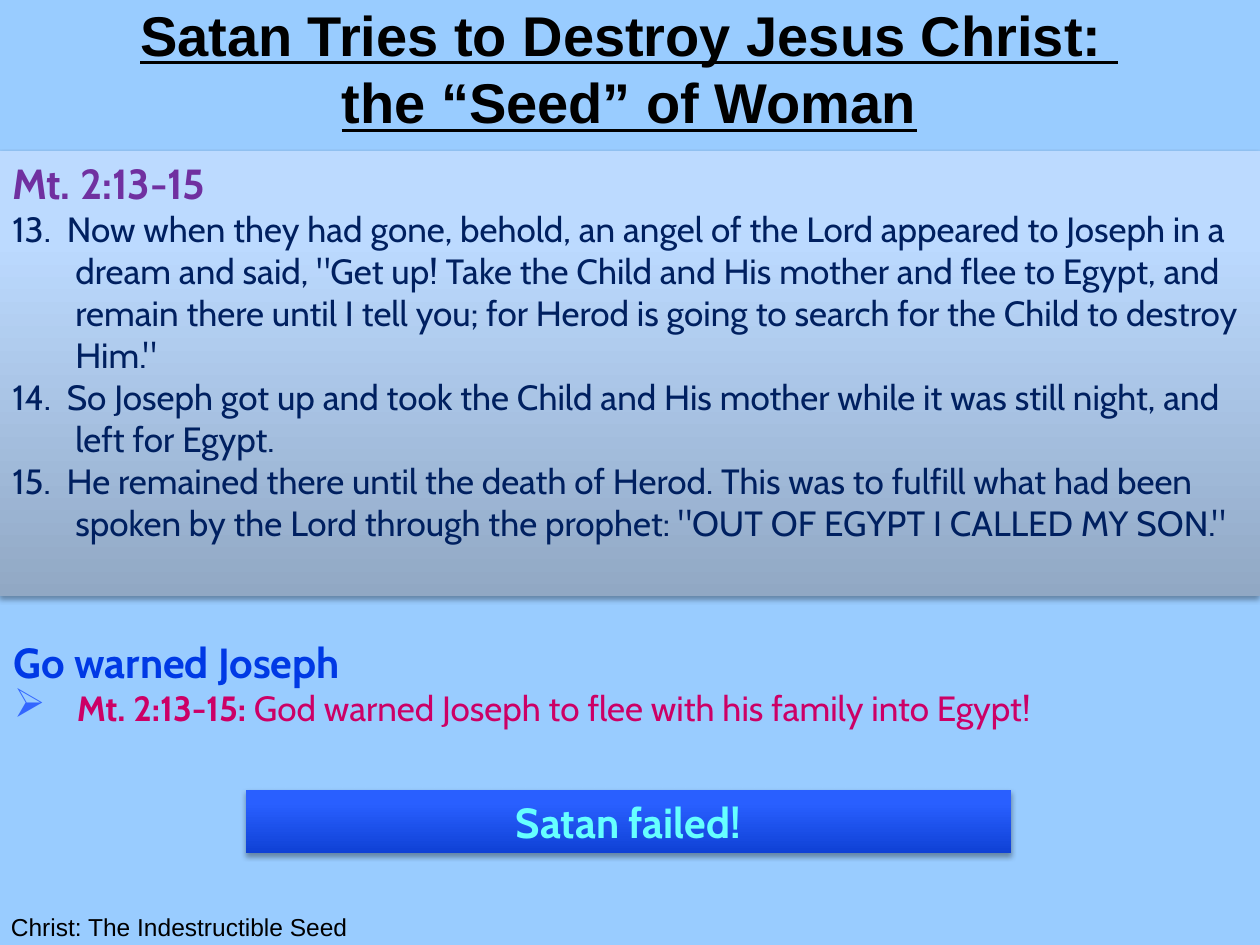
from lxml.etree import SubElement as Sub
from pptx import Presentation
from pptx.dml.color import RGBColor as RGB
from pptx.enum.shapes import MSO_SHAPE as Kind
from pptx.enum.text import MSO_ANCHOR as Anchor, MSO_AUTO_SIZE as Auto, PP_ALIGN as Align
from pptx.oxml.ns import qn
from pptx.util import Cm, Pt

HUES = {
    "sky": "99CCFF", "black": "000000", "purple": "7030A0", "navy": "002060",
    "blue": "0039E5", "mark": "3366FF", "rose": "CC0066", "aqua": "66FFFF",
}
PALE = [(0, "91A8C4"), (80, "BCDAFF"), (100, "BEDBFF")]
DEEP = [(0, "0F41D5"), (80, "295FFF"), (100, "2B60FF")]
VERSES = [
    '13.  Now when they had gone, behold, an angel of the Lord appeared to Joseph in a dream and said, '
    '"Get up! Take the Child and His mother and flee to Egypt, and remain there until I tell you; '
    'for Herod is going to search for the Child to destroy Him."',
    '14.  So Joseph got up and took the Child and His mother while it was still night, and left for Egypt.',
    '15.  He remained there until the death of Herod. This was to fulfill what had been spoken by the Lord '
    'through the prophet: "OUT OF EGYPT I CALLED MY SON."',
]


def add_run(para, text, size, hue, bold=False, face="Cabin"):
    """Add one styled run to a paragraph."""
    run = para.add_run()
    run.text = text
    font = run.font
    font.size, font.bold, font.name = Pt(size), bold, face
    font.color.rgb = RGB.from_string(HUES[hue])
    return run


def add_line(frame, runs, align=Align.LEFT, hang=True, mark=None):
    """Add a paragraph of runs, with a hanging indent and a bullet if asked."""
    para = frame.paragraphs[0]
    if para.runs:
        para = frame.add_paragraph()
    para.alignment = align
    props = para._p.get_or_add_pPr()
    if hang:
        props.set("marL", str(Cm(1.27)))
        props.set("indent", str(-Cm(1.27)))
    if mark:
        tint = Sub(props, qn("a:buClr"))
        Sub(tint, qn("a:srgbClr"), val=HUES["mark"])
        Sub(props, qn("a:buSzPct"), val="115000")
        Sub(props, qn("a:buChar"), char=mark)
    for run in runs:
        add_run(para, *run)


def add_text(slide, *box):
    """Add a wrapping text box and return its frame."""
    frame = slide.shapes.add_textbox(*map(Cm, box)).text_frame
    frame.word_wrap = True
    return frame


def add_panel(slide, stops, *box):
    """Add a shaded panel with a soft shadow and return its frame."""
    panel = slide.shapes.add_shape(Kind.RECTANGLE, *map(Cm, box))
    panel.line.fill.background()
    panel.fill.gradient()
    panel.fill.gradient_angle = 90
    props = panel.element.spPr
    ramp = props.find(".//" + qn("a:gsLst"))
    ramp.clear()
    for place, hue in stops:
        stop = Sub(ramp, qn("a:gs"), pos=str(place * 1000))
        Sub(stop, qn("a:srgbClr"), val=hue)
    panel.shadow.inherit = False
    shade = Sub(props.find(qn("a:effectLst")), qn("a:outerShdw"), blurRad=str(Pt(3.1)),
                dist=str(Pt(1.8)), dir="5400000", rotWithShape="0")
    tint = Sub(shade, qn("a:srgbClr"), val=HUES["black"])
    Sub(tint, qn("a:alpha"), val="35000")
    frame = panel.text_frame
    frame.word_wrap = True
    frame.vertical_anchor = Anchor.TOP
    return frame


def set_title(slide, lines, *box):
    """Place the title and fill it line by line."""
    title = slide.shapes.title
    title.left, title.top, title.width, title.height = map(Cm, box)
    frame = title.text_frame
    frame.auto_size = Auto.NONE
    frame.vertical_anchor = Anchor.MIDDLE
    para = frame.paragraphs[0]
    para.alignment = Align.CENTER
    for i, line in enumerate(lines):
        if i:
            para.add_line_break()
        add_run(para, line, 32, "black", True, "Arial").font.underline = True


def main():
    """Build the slide and save it."""
    deck = Presentation()
    deck.slide_width, deck.slide_height = Cm(25.4), Cm(19.05)
    slide = deck.slides.add_slide(deck.slide_layouts[5])
    back = slide.background.fill
    back.solid()
    back.fore_color.rgb = RGB.from_string(HUES["sky"])

    set_title(slide, ["Satan Tries to Destroy Jesus Christ: ", "the “Seed” of Woman"],
              -0.03, 0, 25.43, 2.74)

    foot = add_text(slide, -0.03, 18.26, 7.44, 0.84)
    add_line(foot, [("Christ: The Indestructible Seed", 14, "black", False, "Arial")], hang=False)

    note = add_text(slide, 0.03, 12.7, 25.4, 2.13)
    add_line(note, [("Go warned Joseph", 24, "blue", True)])
    add_line(note, [("Mt. 2:13-15: ", 20, "rose", True),
                    ("God warned Joseph to flee with his family into Egypt!", 20, "rose")], mark="➢")

    verse = add_panel(slide, PALE, 0, 3.05, 25.4, 8.97)
    add_line(verse, [("Mt. 2:13-15", 24, "purple", True)])
    for text in VERSES:
        add_line(verse, [(text, 20, "navy")])

    end = add_panel(slide, DEEP, 4.95, 15.93, 15.44, 1.27)
    add_line(end, [("Satan failed!", 24, "aqua", True)], Align.CENTER)

    deck.save("out.pptx")


if __name__ == "__main__":
    main()
